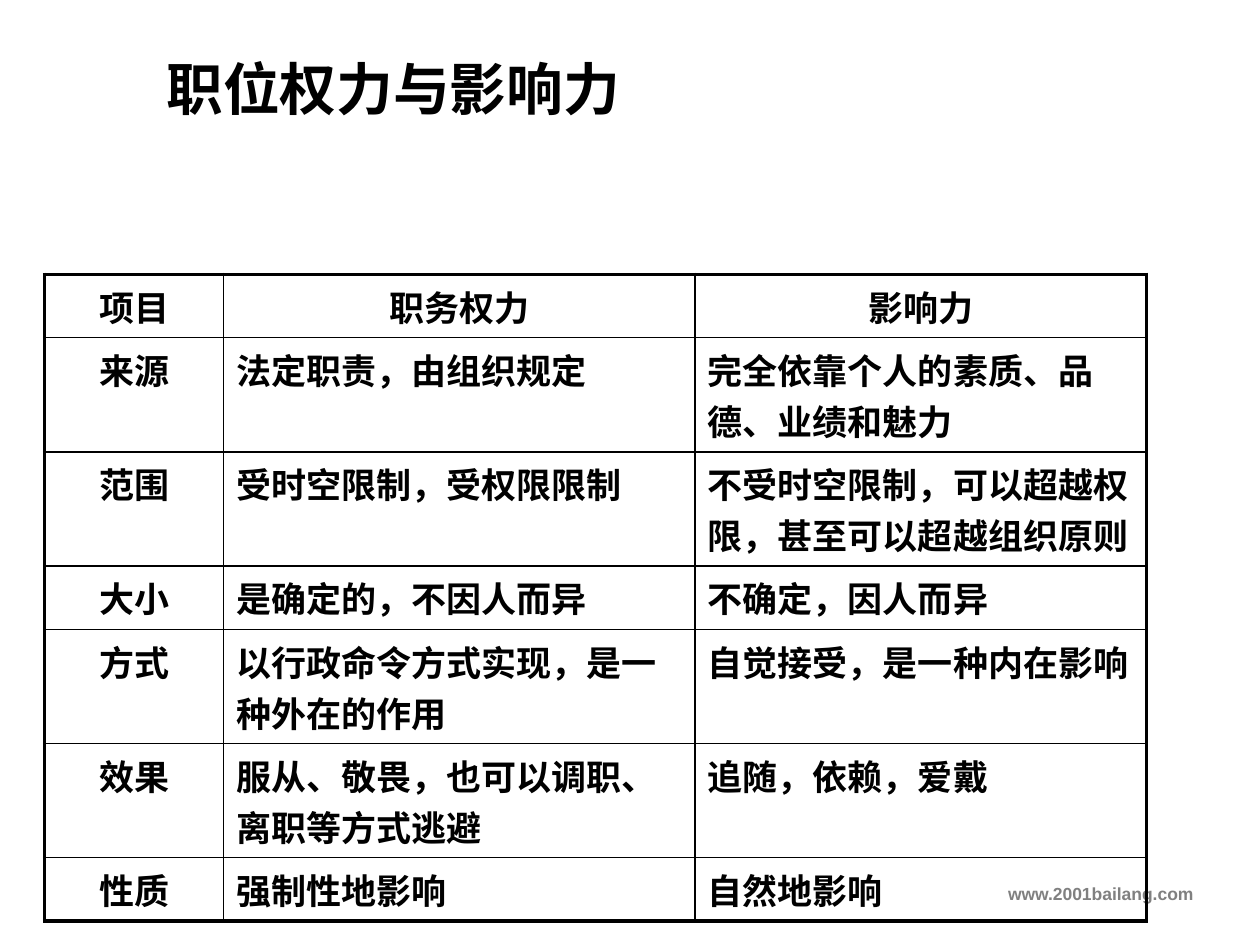
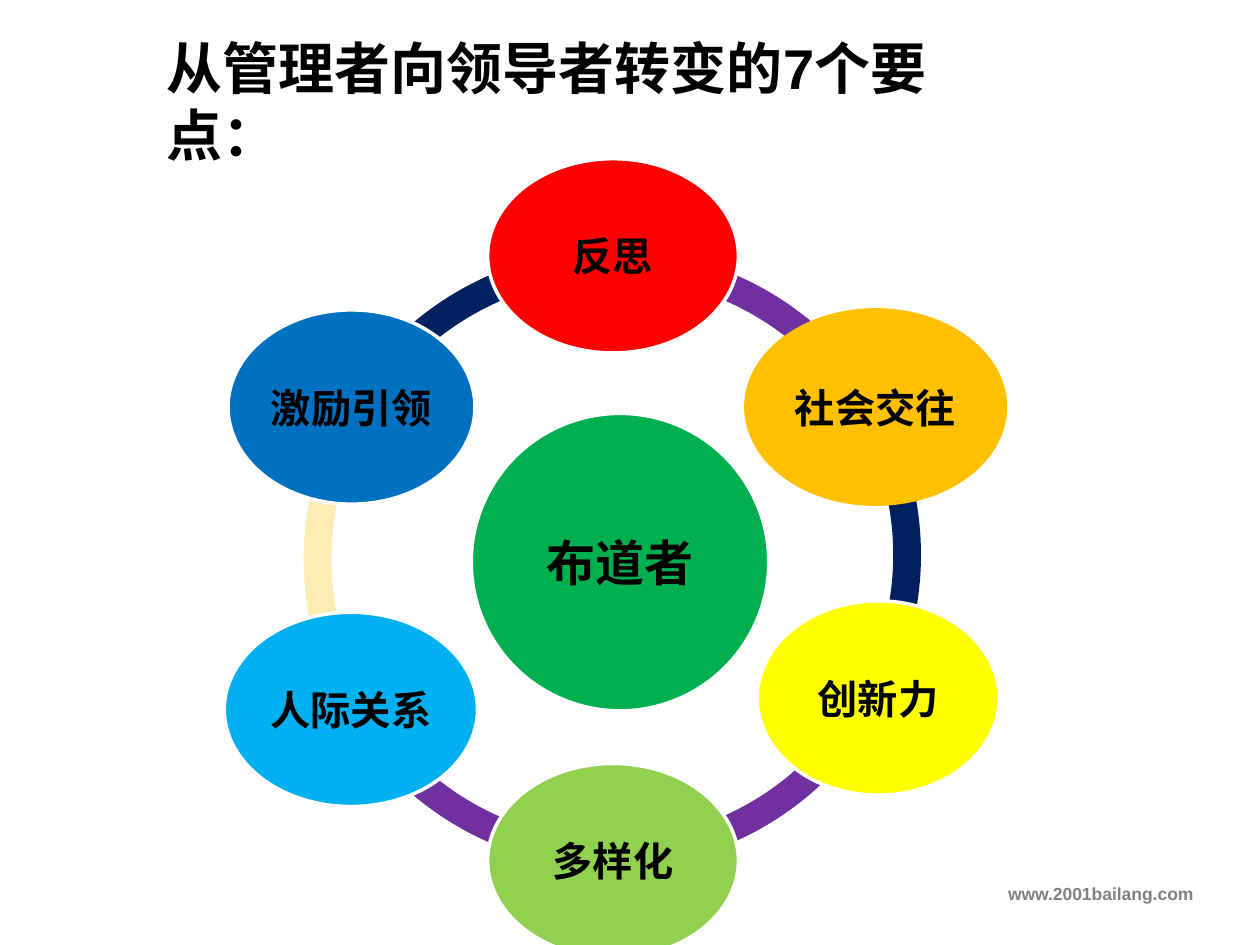
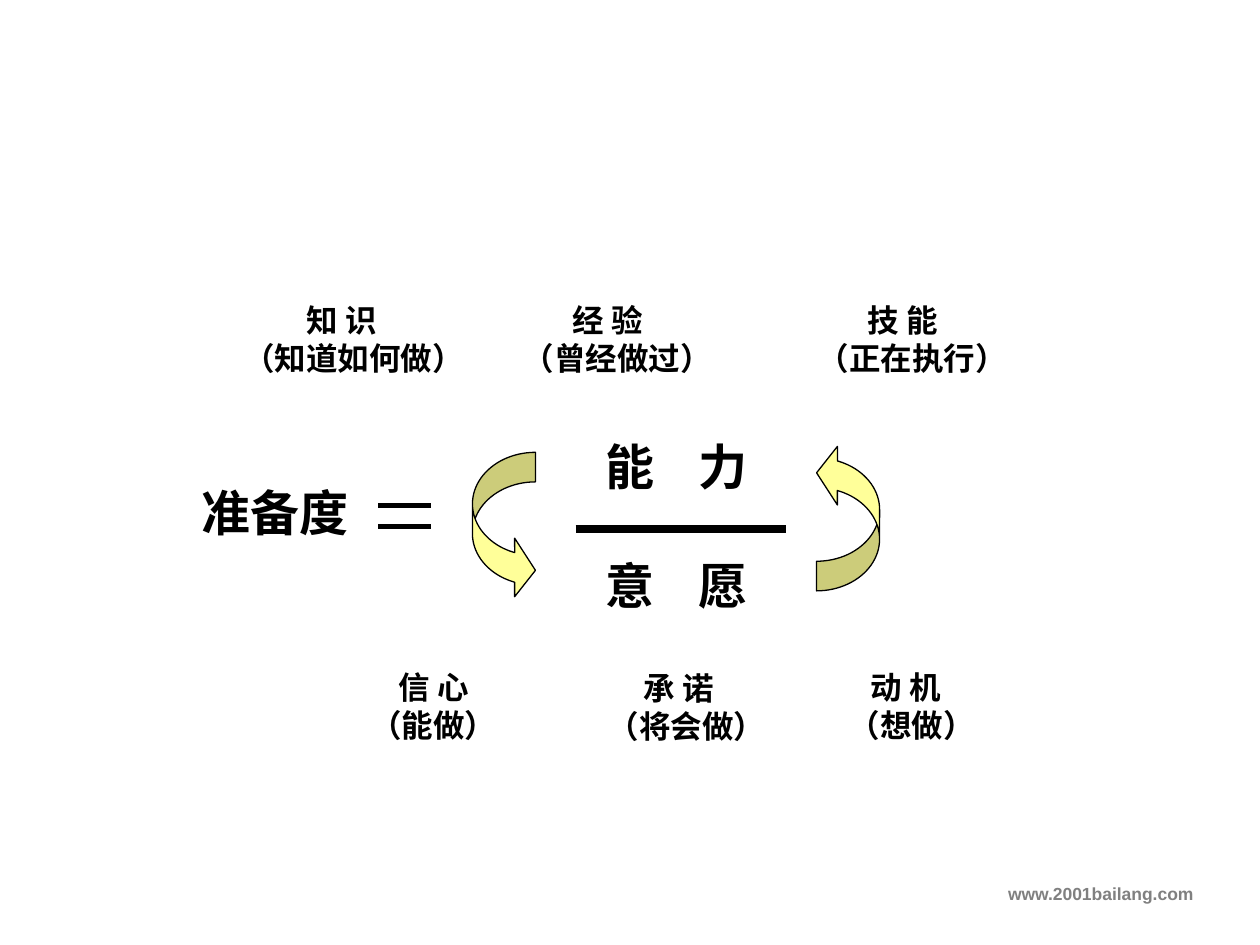
import pptx
import pptx.dml.color
import pptx.enum.shapes
import pptx.enum.text
import pptx.oxml
import pptx.oxml.ns
import pptx.util
from lxml import etree

Pt = pptx.util.Pt
Shape = pptx.enum.shapes.MSO_SHAPE
Align = pptx.enum.text.PP_ALIGN
Anchor = pptx.enum.text.MSO_ANCHOR
qn = pptx.oxml.ns.qn

FONT = "Arial"
BLACK, WHITE, GREY = "000000", "FFFFFF", "808080"
NAVY, PURPLE, CREAM, PALE_YELLOW = "002060", "7030A0", "FDECB3", "FFFF99"
THIN, THICK = 1, 2.25

POWER_ROWS = [
    (35.3, "项目", "职务权力", "影响力"),
    (36, "来源", "法定职责，由组织规定", "完全依靠个人的素质、品德、业绩和魅力"),
    (46, "范围", "受时空限制，受权限限制", "不受时空限制，可以超越权限，甚至可以超越组织原则"),
    (33, "大小", "是确定的，不因人而异", "不确定，因人而异"),
    (46, "方式", "以行政命令方式实现，是一种外在的作用", "自觉接受，是一种内在影响"),
    (45.4, "效果", "服从、敬畏，也可以调职、离职等方式逃避", "追随，依赖，爱戴"),
    (35.3, "性质", "强制性地影响", "自然地影响"),
]
POWER_COLUMNS = [102.2, 269.5, 258]

RING_SIZE = 353.5
RING_ARCS = [
    (173.5, 142.6, 126, 162, NAVY),
    (173.5, 142.6, 90, 126, CREAM),
    (173.5, 142.6, 54, 90, PURPLE),
    (171.4, 142.6, 16.54, 53.54, PURPLE),
    (172.8, 140.4, 198.48, 17.01, NAVY),
    (173.5, 142.6, 162, 198, PURPLE),
]
NODE_HEIGHT = 111
RING_NODES = [
    ("反思", 350.3, 146.2, 143.3, "FF0000", WHITE),
    ("社会交往", 500.4, 232.6, 148.3, "FFC000", "FFC000"),
    ("创新力", 501.8, 398.9, 138.2, "FFFF00", WHITE),
    ("多样化", 350.3, 491.8, 143.3, "92D050", WHITE),
    ("人际关系", 200.5, 405.4, 144.7, "00B0F0", WHITE),
    ("激励引领", 200.9, 232.6, 141.1, "0070C0", WHITE),
]

FACTORS = [
    (123.8, 168.5, 219.6, ("知 识", "（知道如何做）"), (44.5, 8)),
    (275.8, 168.5, 213.8, ("经 验", "（曾经做过）"), (44.5, 16)),
    (444.2, 168.5, 208.8, ("技 能", "（正在执行）"), (44.5, 16)),
    (176.4, 378, 123.1, ("信 心", "（能做）"), (44.5, 28)),
    (316.1, 378.7, 136.1, ("承 诺", "（将会做）"), (44.5, 24)),
    (450, 378, 154.1, ("动 机", "（想做）"), (40.5, 28)),
]
TERMS = [
    (339.1, 246.2, "能\t力"),
    (339.1, 313.9, "意\t愿"),
    (108, 272.2, "准备度"),
]
BARS = [(329, 302.4, 120.3, 4.5), (216, 288.7, 30.2, 3), (216, 301, 30.2, 3)]


def rgb(value):
    """Turn a hex string into a colour."""
    return pptx.dml.color.RGBColor.from_string(value)


def write(frame, text, size, color=BLACK, align=Align.LEFT, anchor=Anchor.TOP,
          spacing=None, indents=(), tab=None):
    """Fill a text frame with one paragraph per line, keeping punctuation inside it."""
    frame.word_wrap = True
    frame.vertical_anchor = anchor
    for index, line in enumerate(text.split("\n")):
        paragraph = frame.paragraphs[0] if index == 0 else frame.add_paragraph()
        paragraph.alignment = align
        if spacing:
            paragraph.line_spacing = Pt(spacing)
        properties = paragraph._p.get_or_add_pPr()
        properties.set("hangingPunct", "0")
        if indents:
            properties.set("marL", str(Pt(indents[index])))
        if tab:
            tabs = etree.SubElement(properties, qn("a:tabLst"))
            etree.SubElement(tabs, qn("a:tab"), pos=str(Pt(tab)), algn="l")
        run = paragraph.add_run()
        run.text = line
        run.font.name = FONT
        run.font.size = Pt(size)
        run.font.bold = True
        run.font.color.rgb = rgb(color)


def add_text(slide, left, top, width, height, text, size, **style):
    """Add a text box."""
    box = slide.shapes.add_textbox(Pt(left), Pt(top), Pt(width), Pt(height))
    write(box.text_frame, text, size, **style)


def add_title(slide, top, width, text, size):
    """Add a slide title."""
    add_text(slide, 88, top, width, 45, text, size, anchor=Anchor.MIDDLE, spacing=1.2 * size)


def add_figure(slide, kind, left, top, width, height, fill, line=None, weight=2, adjustments=()):
    """Add a filled preset shape."""
    shape = slide.shapes.add_shape(kind, Pt(left), Pt(top), Pt(width), Pt(height))
    shape.shadow.inherit = False
    shape.fill.solid()
    shape.fill.fore_color.rgb = rgb(fill)
    if line:
        shape.line.color.rgb = rgb(line)
        shape.line.width = Pt(weight)
    else:
        shape.line.fill.background()
    for index, value in enumerate(adjustments):
        shape.adjustments[index] = value
    return shape


def add_node(slide, text, size, center_x, center_y, width, height, fill, line, inset):
    """Add a labelled ellipse around a centre point."""
    node = add_figure(slide, Shape.OVAL, center_x - width / 2, center_y - height / 2,
                      width, height, fill, line)
    frame = node.text_frame
    frame.margin_left = frame.margin_right = frame.margin_top = frame.margin_bottom = Pt(inset)
    write(frame, text, size, align=Align.CENTER, anchor=Anchor.MIDDLE)


def add_bar(slide, left, top, width, weight):
    """Add a horizontal black line."""
    bar = slide.shapes.add_connector(pptx.enum.shapes.MSO_CONNECTOR.STRAIGHT,
                                     Pt(left), Pt(top), Pt(left + width), Pt(top))
    bar.line.color.rgb = rgb(BLACK)
    bar.line.width = Pt(weight)
    etree.SubElement(bar._element.spPr, qn("a:effectLst"))


def set_borders(cell, weights):
    """Draw black borders of a cell, given as left, right, top and bottom weights."""
    properties = cell._tc.get_or_add_tcPr()
    for index, (side, weight) in enumerate(zip("LRTB", weights)):
        border = etree.Element(qn("a:ln" + side), w=str(Pt(weight)))
        fill = etree.SubElement(border, qn("a:solidFill"))
        etree.SubElement(fill, qn("a:srgbClr"), val=BLACK)
        properties.insert(index, border)


def add_power_table(slide):
    """Add the comparison table with a thick outer frame."""
    heights = [row[0] for row in POWER_ROWS]
    last_row, last_column = len(POWER_ROWS) - 1, len(POWER_COLUMNS) - 1
    table = slide.shapes.add_table(last_row + 1, last_column + 1, Pt(25.5), Pt(156.7),
                                   Pt(sum(POWER_COLUMNS)), Pt(sum(heights))).table
    table.first_row = table.horz_banding = False
    for column, width in enumerate(POWER_COLUMNS):
        table.columns[column].width = Pt(width)
    for row, (height, *texts) in enumerate(POWER_ROWS):
        table.rows[row].height = Pt(height)
        for column, text in enumerate(texts):
            cell = table.cell(row, column)
            cell.fill.background()
            centered = row == 0 or column == 0
            write(cell.text_frame, text, 20, spacing=29,
                  align=Align.CENTER if centered else Align.LEFT)
            outer = (column == 0, column == last_column, row == 0, row == last_row)
            set_borders(cell, [THICK if edge else THIN for edge in outer])


def add_page(presentation):
    """Add a blank slide with the shared footer."""
    slide = presentation.slides.add_slide(presentation.slide_layouts[6])
    add_text(slide, 0, 501, 689, 25, "www.2001bailang.com", 10, color=GREY, align=Align.RIGHT)
    return slide


def build_power_slide(presentation):
    """Build the comparison of power and influence."""
    slide = add_page(presentation)
    add_title(slide, 27.5, 596, "职位权力与影响力", 32.4)
    add_power_table(slide)


def build_ring_slide(presentation):
    """Build the ring of seven points."""
    slide = add_page(presentation)
    add_title(slide, 35, 487.5, "从管理者向领导者转变的7个要点：", 32)
    for left, top, start, end, color in RING_ARCS:
        add_figure(slide, Shape.BLOCK_ARC, left, top, RING_SIZE, RING_SIZE, color,
                   adjustments=(start, end, 0.045))
    add_node(slide, "布道者", 28, 354.3, 321.2, 170, 170, "00B050", WHITE, 3)
    for text, center_x, center_y, width, fill, line in RING_NODES:
        add_node(slide, text, 23, center_x, center_y, width, NODE_HEIGHT, fill, line, 2)


def build_readiness_slide(presentation):
    """Build the readiness formula and its factors."""
    slide = add_page(presentation)
    for left, top, width, lines, indents in FACTORS:
        add_text(slide, left, top, width, 51, "\n".join(lines), 18, spacing=21.6, indents=indents)
    for left, top, text in TERMS:
        add_text(slide, left, top, 103, 41, text, 28, spacing=33.6, tab=53)
    for bar in BARS:
        add_bar(slide, *bar)
    for left, top, rotation in ((270, 258.5, 0), (466.6, 253.4, 180)):
        arrow = add_figure(slide, Shape.CURVED_RIGHT_ARROW, left, top, 36, 84.2, PALE_YELLOW,
                           BLACK, 0.75, (0.47, 0.93, 0.33))
        arrow.rotation = rotation


def main():
    """Build and save the presentation."""
    presentation = pptx.Presentation()
    presentation.slide_width = Pt(720)
    presentation.slide_height = Pt(540)
    build_power_slide(presentation)
    build_ring_slide(presentation)
    build_readiness_slide(presentation)
    presentation.save("out.pptx")


if __name__ == "__main__":
    main()
